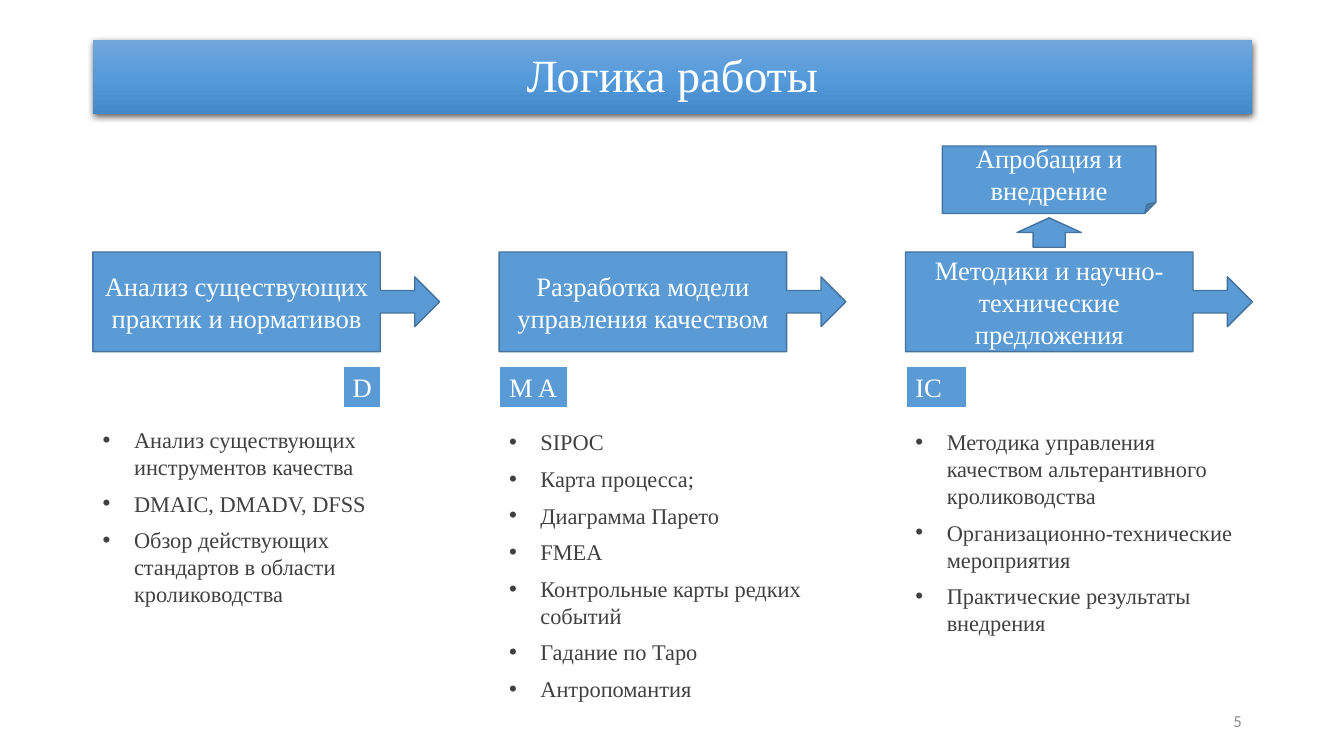
from copy import deepcopy
from dataclasses import dataclass

from pptx import Presentation
from pptx.dml.color import RGBColor as Rgb
from pptx.enum.shapes import MSO_SHAPE as Kind
from pptx.enum.text import MSO_ANCHOR as Anchor, PP_ALIGN as Align
from pptx.oxml import parse_xml
from pptx.oxml.ns import nsdecls
from pptx.shapes.autoshape import Shape
from pptx.text.text import _Paragraph as Para
from pptx.util import Cm, Pt


@dataclass(frozen=True)
class Theme:
    blue: str = "5B9BD5"
    edge: str = "43739E"
    white: str = "FFFFFF"
    dark: str = "404040"
    gray: str = "8C8C8C"
    fade: tuple[str, ...] = ("71A6DB", "559BDB", "448ACA")
    serif: str = "Times New Roman"
    sans: str = "Calibri"
    head: float = 33
    body: float = 19
    item: float = 16
    foot: float = 12


@dataclass(frozen=True)
class Box:
    left: float
    top: float
    width: float
    height: float

    def place(self) -> tuple[Cm, Cm, Cm, Cm]:
        return Cm(self.left), Cm(self.top), Cm(self.width), Cm(self.height)


@dataclass(frozen=True)
class Stage:
    title: str
    mark: str
    shift: float  # mark offset from the column's left edge
    width: float
    wrap: bool
    top: float
    items: tuple[str, ...]


THEME = Theme()
LEFT, PITCH, WIDE = 2.34, 10.24, 8.74
INDENT = Cm(0.79)

STAGES = (
    Stage("Анализ существующих практик и нормативов", "D", 6.3, 0.97, True, 10.62, (
        "Анализ существующих инструментов качества",
        "DMAIC, DMADV, DFSS",
        "Обзор действующих стандартов в области кролиководства",
    )),
    Stage("Разработка модели управления качеством", "M A", 0, 1.73, False, 10.67, (
        "SIPOC",
        "Карта процесса;",
        "Диаграмма Парето",
        "FMEA",
        "Контрольные карты редких событий",
        "Гадание по Таро",
        "Антропомантия",
    )),
    Stage("Методики и научно-технические предложения", "IC", 0, 1.55, True, 10.67, (
        "Методика управления качеством альтерантивного кролиководства",
        "Организационно-технические мероприятия",
        "Практические результаты внедрения",
    )),
)

deck = Presentation()
deck.slide_width, deck.slide_height = Cm(33.87), Cm(19.05)
slide = deck.slides.add_slide(deck.slide_layouts[6])


def write(para: Para, text: str, size: float, color: str = THEME.white,
          face: str = THEME.serif, align: Align = Align.LEFT) -> None:
    para.alignment = align
    run = para.add_run()
    run.text = text
    run.font.name, run.font.size = face, Pt(size)
    run.font.color.rgb = Rgb.from_string(color)


def block(kind: Kind, box: Box, edge: str = THEME.edge, line: float = 1) -> Shape:
    shape = slide.shapes.add_shape(kind, *box.place())
    shape.shadow.inherit = False
    shape.fill.solid()
    shape.fill.fore_color.rgb = Rgb.from_string(THEME.blue)
    shape.line.color.rgb = Rgb.from_string(edge)
    shape.line.width = Pt(line)
    shape.text_frame.word_wrap = True
    return shape


def label(shape: Shape, text: str, size: float = THEME.body) -> None:
    shape.text_frame.vertical_anchor = Anchor.MIDDLE
    write(shape.text_frame.paragraphs[0], text, size, align=Align.CENTER)


def banner(text: str, box: Box) -> None:
    shape = block(Kind.RECTANGLE, box)
    shape.line.fill.background()
    shape.fill.gradient()
    shape.fill.gradient_angle = 270
    stops = shape.fill._fill._gradFill.gsLst
    stops.insert(1, deepcopy(stops[0]))
    for stop, tone, spot in zip(shape.fill.gradient_stops, THEME.fade, (0, 0.5, 1)):
        stop.color.rgb = Rgb.from_string(tone)
        stop.position = spot
    glow = shape._element.spPr.find("{*}effectLst")
    glow.append(parse_xml(
        f'<a:outerShdw {nsdecls("a")} blurRad="{Pt(4.5)}" dist="{Pt(1.5)}" '
        'dir="5400000" algn="ctr" rotWithShape="0"><a:srgbClr val="000000">'
        '<a:alpha val="63000"/></a:srgbClr></a:outerShdw>'))
    label(shape, text, THEME.head)
    shape.text_frame.paragraphs[0].line_spacing = 0.9


def bullets(items: tuple[str, ...], box: Box) -> None:
    frame = slide.shapes.add_textbox(*box.place()).text_frame
    frame.word_wrap = True
    for index, item in enumerate(items):
        para = frame.add_paragraph() if index else frame.paragraphs[0]
        write(para, item, THEME.item, THEME.dark)
        para.space_after = Pt(7)
        props = para._p.get_or_add_pPr()
        props.set("marL", str(INDENT))
        props.set("indent", str(-INDENT))
        props.append(parse_xml(f'<a:buFont {nsdecls("a")} typeface="Arial"/>'))
        props.append(parse_xml(f'<a:buChar {nsdecls("a")} char="•"/>'))


def column(stage: Stage, left: float) -> None:
    call = block(Kind.RIGHT_ARROW_CALLOUT, Box(left, 6.35, WIDE, 2.51))
    for index, value in enumerate((0.226, 0.25, 0.25, 0.829)):
        call.adjustments[index] = value
    label(call, stage.title)
    spot = Box(left + stage.shift, 9.22, stage.width, 1.07)
    mark = block(Kind.RECTANGLE, spot, THEME.white, 1.5)
    mark.text_frame.word_wrap = stage.wrap
    mark.text_frame.vertical_anchor = Anchor.TOP
    write(mark.text_frame.paragraphs[0], stage.mark, THEME.body)
    bullets(stage.items, Box(left, stage.top, WIDE, 5.5))


def main() -> None:
    # Title
    banner("Логика работы", Box(LEFT, 1.02, 29.21, 1.85))

    # Three stages with their marks and lists
    for index, stage in enumerate(STAGES):
        column(stage, LEFT + index * PITCH)

    # Outcome above the last stage
    label(block(Kind.FOLDED_CORNER, Box(23.75, 3.68, 5.38, 1.7)), "Апробация и внедрение")
    block(Kind.UP_ARROW, Box(25.63, 5.49, 1.62, 0.74))

    # Slide number
    frame = slide.shapes.add_textbox(*Box(23.93, 17.65, 7.62, 1.02).place()).text_frame
    frame.word_wrap = True
    frame.vertical_anchor = Anchor.MIDDLE
    write(frame.paragraphs[0], "5", THEME.foot, THEME.gray, THEME.sans, Align.RIGHT)

    deck.save("out.pptx")


if __name__ == "__main__":
    main()
